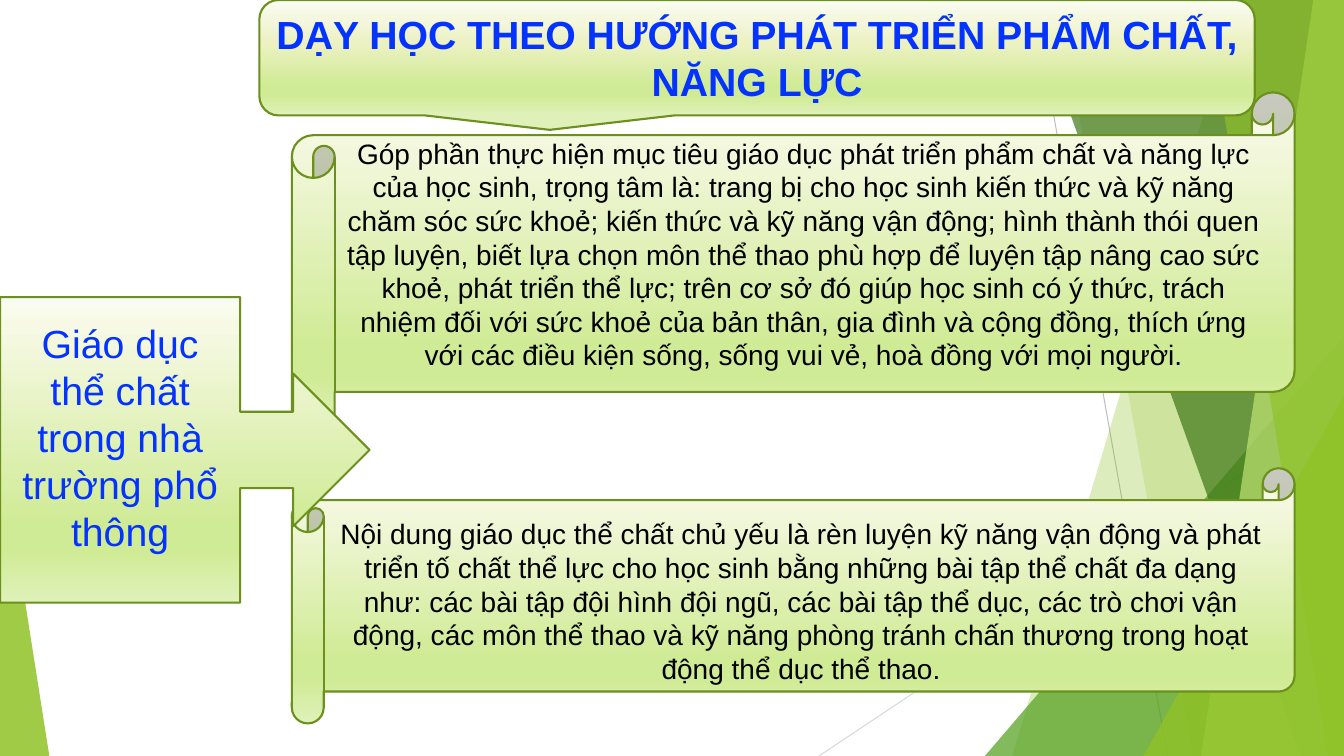
from copy import deepcopy

from lxml.etree import SubElement
from pptx import Presentation
from pptx.dml.color import RGBColor
from pptx.enum.shapes import MSO_CONNECTOR as LINE, MSO_SHAPE as SHAPE
from pptx.enum.text import MSO_ANCHOR as ANCHOR, MSO_AUTO_SIZE as AUTO, PP_ALIGN as ALIGN
from pptx.oxml.ns import qn
from pptx.util import Pt

PX = 9525
W, H = 1280, 720
COLORS = {
    "green": "90C226", "leaf": "54A021", "forest": "3F7819", "lime": "C0E474",
    "outline": "6B901C", "blue": "0432FF", "black": "000000",
    "gray": "BFBFBF", "pale": "D9D9D9",
}
PANEL_STOPS = [(0, "FAFDF3"), (9, "F7F9E5"), (74, "D0EB96"), (83, "D0EB96"), (100, "DFF1B9")]
TITLE_STOPS = [(0, "FAFDF3"), (17, "F4F7DD"), (38, "ECF1C2")] + PANEL_STOPS[2:]

TITLE = "DẠY HỌC THEO HƯỚNG PHÁT TRIỂN PHẨM CHẤT, NĂNG LỰC"
SUBJECT = "Giáo dục thể chất trong nhà trường phổ thông"
GOAL = (
    "Góp phần thực hiện mục tiêu giáo dục phát triển phẩm chất và năng lực của học sinh, "
    "trọng tâm là: trang bị cho học sinh kiến thức và kỹ năng chăm sóc sức khoẻ; kiến thức "
    "và kỹ năng vận động; hình thành thói quen tập luyện, biết lựa chọn môn thể thao phù hợp "
    "để luyện tập nâng cao sức khoẻ, phát triển thể lực; trên cơ sở đó giúp học sinh có ý "
    "thức, trách nhiệm đối với sức khoẻ của bản thân, gia đình và cộng đồng, thích ứng với "
    "các điều kiện sống, sống vui vẻ, hoà đồng với mọi người."
)
CONTENT = (
    "Nội dung giáo dục thể chất chủ yếu là rèn luyện kỹ năng vận động và phát triển tố chất "
    "thể lực cho học sinh bằng những bài tập thể chất đa dạng như: các bài tập đội hình đội "
    "ngũ, các bài tập thể dục, các trò chơi vận động, các môn thể thao và kỹ năng phòng tránh "
    "chấn thương trong hoạt động thể dục thể thao."
)


def px(*lengths):
    """Turn px lengths into EMU."""
    return [n * PX for n in lengths]


def rgb(name):
    """Return the palette colour called name."""
    return RGBColor.from_string(COLORS[name])


def write(sp, text, size=20, color="black", bold=False, top=5, side=10, anchor=ANCHOR.TOP):
    """Set the centred text of a shape."""
    tf = sp.text_frame
    tf.word_wrap = True
    tf.auto_size = AUTO.NONE
    tf.vertical_anchor = anchor
    tf.margin_left = tf.margin_right = side * PX
    tf.margin_top, tf.margin_bottom = px(top, 5)
    p = tf.paragraphs[0]
    p.alignment = ALIGN.CENTER
    p.line_spacing = 1.0
    r = p.add_run()
    r.text = text
    r.font.name = "Arial"
    r.font.size = Pt(size)
    r.font.bold = bold
    r.font.color.rgb = rgb(color)


def panel(s, kind, box, stops=PANEL_STOPS):
    """Draw an outlined shape with a vertical gradient."""
    sp = s.shapes.add_shape(kind, *px(*box))
    sp.shadow.inherit = False
    sp.line.color.rgb = rgb("outline")
    sp.line.width = Pt(1.5)
    sp.fill.gradient()
    sp.fill.gradient_angle = 270
    stop_list = next(sp._element.spPr.iter(qn("a:gsLst")))
    for old in list(stop_list):
        stop_list.remove(old)
    for percent, color in stops:
        stop = SubElement(stop_list, qn("a:gs"), pos=str(percent * 1000))
        SubElement(stop, qn("a:srgbClr"), val=color)
    return sp


def tint(sp, color, opacity):
    """Fill a shape with a translucent colour and no outline."""
    sp.shadow.inherit = False
    sp.line.fill.background()
    sp.fill.solid()
    sp.fill.fore_color.rgb = rgb(color)
    color_el = next(sp._element.spPr.iter(qn("a:srgbClr")))
    SubElement(color_el, qn("a:alpha"), val=str(opacity * 1000))


def thin_line(s, ends, color):
    """Draw a fine straight line."""
    line = s.shapes.add_connector(LINE.STRAIGHT, *px(*ends))
    line.line.color.rgb = rgb(color)
    line.line.width = Pt(0.75)
    SubElement(line._element.spPr, qn("a:effectLst"))


def band(s, top_x, bottom_x, color, opacity):
    """Fill from a slanted left edge to the right side of the slide."""
    builder = s.shapes.build_freeform(top_x, -1, scale=PX)
    builder.add_line_segments([(W, -1), (W, H), (bottom_x, H)], close=True)
    tint(builder.convert_to_shape(), color, opacity)


def wedge(s, box, apex, color, opacity):
    """Draw a right triangle whose apex is at a share of its width."""
    sp = s.shapes.add_shape(SHAPE.ISOSCELES_TRIANGLE, *px(*box))
    sp.adjustments[0] = apex
    tint(sp, color, opacity)


def facets(s):
    """Draw the green facets behind the content."""
    thin_line(s, (984, 0, 1112, H), "gray")
    thin_line(s, (W, 387, 780, H), "pale")
    band(s, 1179, 964, "green", 30)
    band(s, 1008, 1136, "green", 20)
    wedge(s, (938, 320, 342, 400), 1, "leaf", 72)
    band(s, 980, 1239, "forest", 70)
    band(s, 1251, 1144, "lime", 70)
    band(s, 1148, 1265, "green", 65)
    wedge(s, (1089, 377, 191, 343), 1, "green", 80)
    wedge(s, (0, 421, 47, 299), 0, "green", 85)


def heading(s, box):
    """Place the title over its speech-bubble panel."""
    panel(s, SHAPE.ROUNDED_RECTANGULAR_CALLOUT, box, TITLE_STOPS)
    title = s.shapes.title
    title.left, title.top, title.width, title.height = px(*box)
    write(title, TITLE, size=28, color="blue", bold=True, side=12, anchor=ANCHOR.MIDDLE)
    s.shapes._spTree.append(title._element)


def scroll(s, box, text, top):
    """Place a scroll with its paragraph."""
    write(panel(s, SHAPE.HORIZONTAL_SCROLL, box), text, top=top)


def subject(s, box):
    """Place the arrow callout naming the subject."""
    write(panel(s, SHAPE.RIGHT_ARROW_CALLOUT, box), SUBJECT, size=28, color="blue", top=21)


def main():
    """Build the slide and save it."""
    prs = Presentation()
    prs.slide_width, prs.slide_height = px(W, H)
    s = prs.slides.add_slide(prs.slide_layouts[5])
    facets(s)
    scroll(s, (278, 88, 955, 326), GOAL, top=1)
    scroll(s, (278, 446, 955, 243), CONTENT, top=16)
    subject(s, (0, 283, 352, 291))
    heading(s, (247, 0, 948, 110))
    prs.save("out.pptx")


if __name__ == "__main__":
    main()
